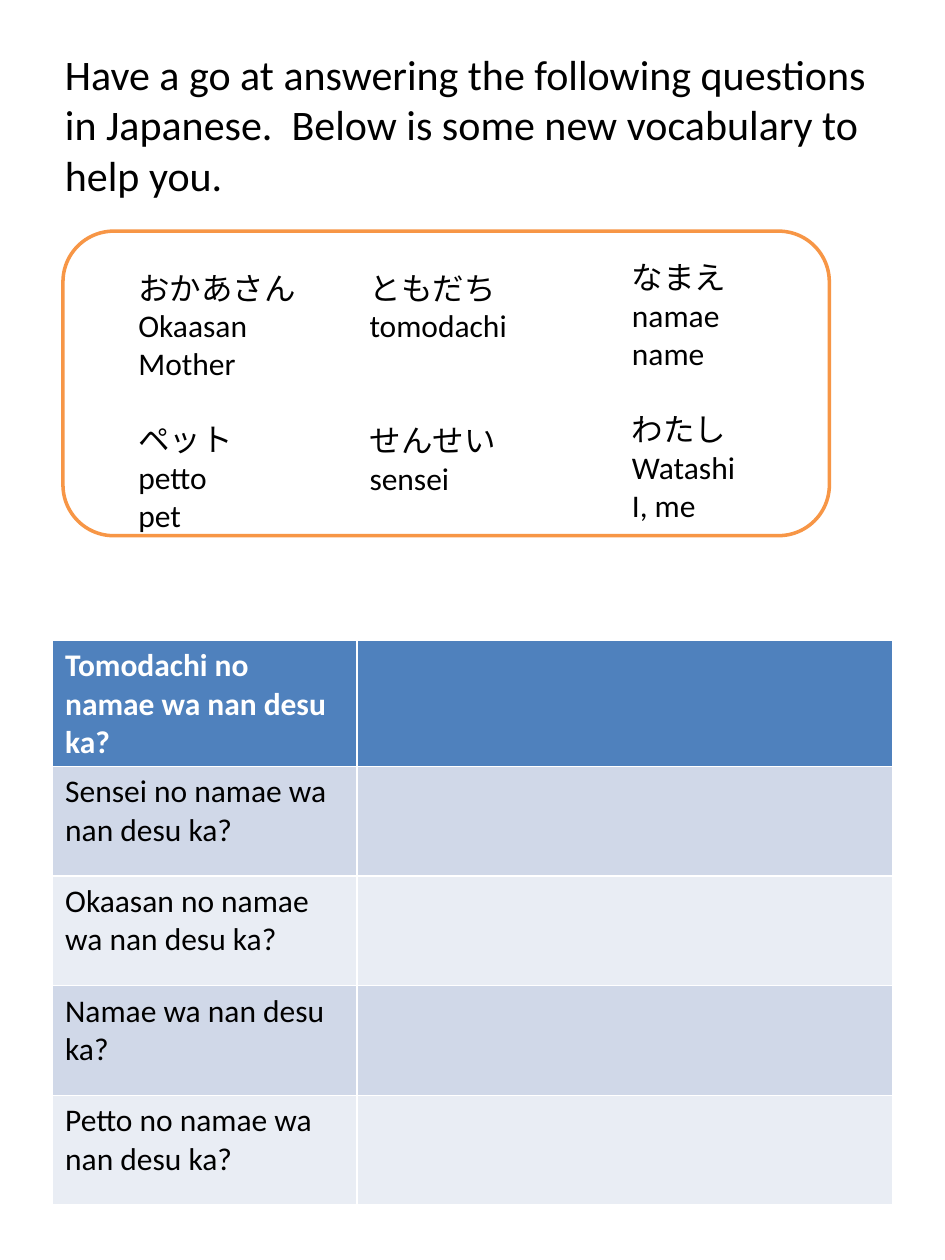
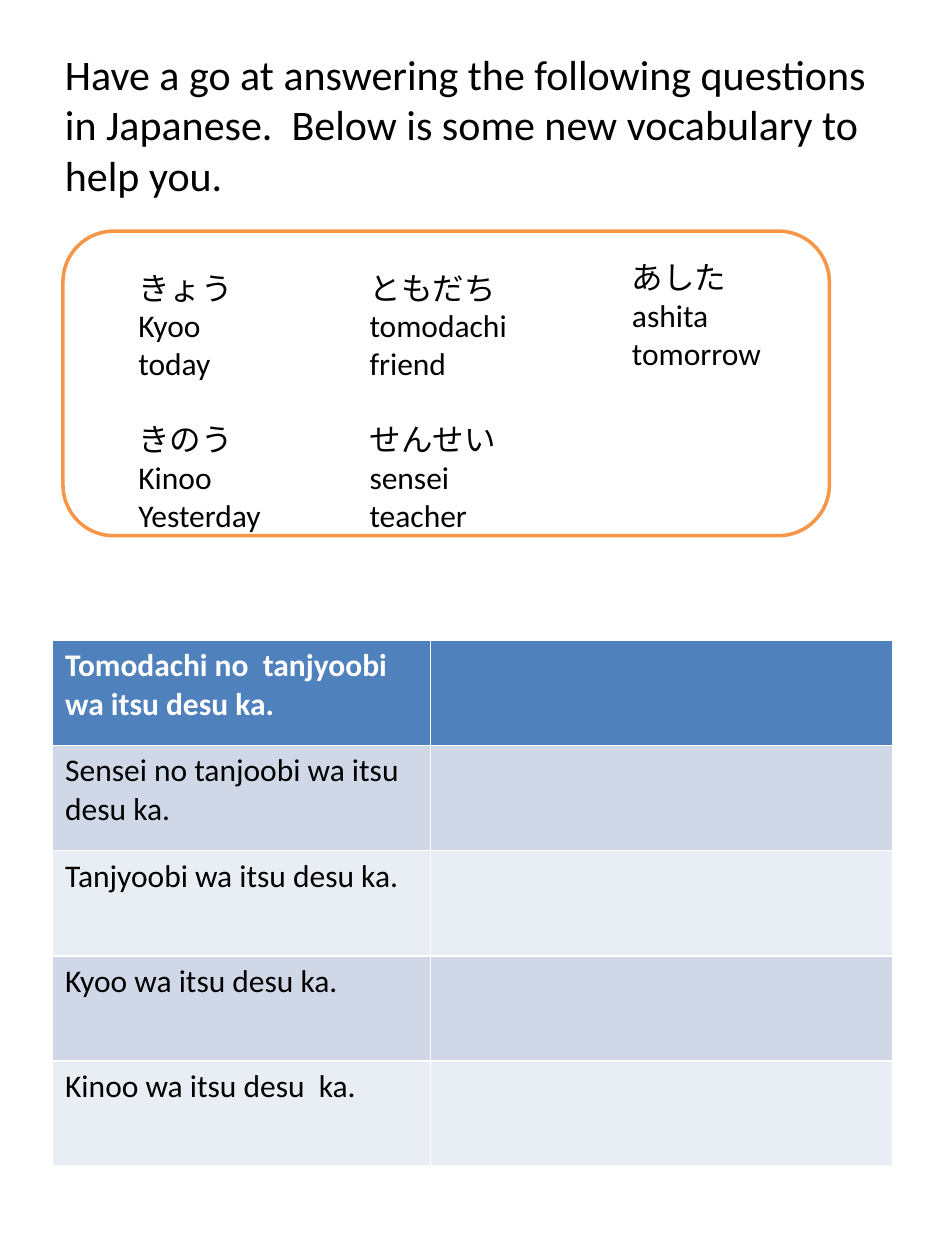
from pptx import Presentation
from pptx import util as u
from pptx.dml.color import RGBColor
from pptx.enum import shapes, text

INTRO = ("Have a go at answering the following questions in Japanese.  "
         "Below is some new vocabulary to help you.")

PAGES = [
    {
        "vocab": [
            [("おかあさん", "Okaasan", "Mother"), ("ペット", "petto", "pet")],
            [("ともだち", "tomodachi"), ("せんせい", "sensei")],
            [("なまえ", "namae", "name"), ("わたし", "Watashi", "I, me")],
        ],
        "asks": [
            "Tomodachi no namae wa nan desu ka?",
            "Sensei no namae wa nan desu ka?",
            "Okaasan no namae wa nan desu ka?",
            "Namae wa nan desu ka?",
            "Petto no namae wa nan desu ka?",
        ],
        "cols": (6.14, 10.8),
        "row": 2.21,
    },
    {
        "vocab": [
            [("きょう", "Kyoo", "today"), ("きのう", "Kinoo", "Yesterday")],
            [("ともだち", "tomodachi", "friend"), ("せんせい", "sensei", "teacher")],
            [("あした", "ashita", "tomorrow")],
        ],
        "asks": [
            "Tomodachi no  tanjyoobi wa itsu desu ka.",
            "Sensei no tanjoobi wa itsu desu ka.",
            "Tanjyoobi wa itsu desu ka.",
            "Kyoo wa itsu desu ka.",
            "Kinoo wa itsu desu  ka.",
        ],
        "cols": (7.62, 9.32),
        "row": 2.12,
    },
]

SPOTS = [(2.54, 5.29, 5.29), (7.2, 5.29, 3.81), (12.49, 5.08, 3.18)]
LEFT = 1.06
LINE = 22
BLACK, WHITE, ORANGE = "000000", "FFFFFF", "F79646"
HEAD, BANDS = "4F81BD", ("E9EDF4", "D0D8E8")


def color(code):
    return RGBColor.from_string(code)


def style(para, size, ink=BLACK, bold=False):
    for run in para.runs:
        run.font.name = "Calibri"
        run.font.size = u.Pt(size)
        run.font.bold = bold
        run.font.color.rgb = color(ink)


def add_box(slide, x, y, w, h):
    frame = slide.shapes.add_textbox(u.Cm(x), u.Cm(y), u.Cm(w), u.Cm(h)).text_frame
    frame.word_wrap = True
    frame.auto_size = text.MSO_AUTO_SIZE.SHAPE_TO_FIT_TEXT
    return frame


def add_intro(slide):
    frame = add_box(slide, LEFT, 0.85, 16.72, 2.31)
    frame.text = INTRO
    style(frame.paragraphs[0], 24)


def add_panel(slide):
    panel = slide.shapes.add_shape(shapes.MSO_SHAPE.ROUNDED_RECTANGLE,
                                   u.Cm(1.27), u.Cm(4.66), u.Cm(15.45), u.Cm(6.14))
    panel.shadow.inherit = False
    panel.fill.solid()
    panel.fill.fore_color.rgb = color(WHITE)
    panel.line.color.rgb = color(ORANGE)
    panel.line.width = u.Pt(2)


def add_words(slide, words, spot):
    frame = add_box(slide, *spot, 5.64)
    frame.text = "\n".join(line for word in words for line in word)
    for para in frame.paragraphs:
        style(para, 18)
    first = len(words[0])
    if len(words) > 1:
        frame.paragraphs[first].space_before = u.Pt(LINE * (4 - first))


def add_asks(slide, asks, cols, row):
    table = slide.shapes.add_table(len(asks), len(cols), u.Cm(LEFT), u.Cm(12.91),
                                   u.Cm(sum(cols)), u.Cm(row * len(asks))).table
    for col, width in zip(table.columns, cols):
        col.width = u.Cm(width)
    for i, ask in enumerate(asks):
        table.rows[i].height = u.Cm(row)
        table.cell(i, 0).text = ask
        for cell in table.rows[i].cells:
            cell.fill.solid()
            cell.fill.fore_color.rgb = color(BANDS[i % 2] if i else HEAD)
            style(cell.text_frame.paragraphs[0], 18, BLACK if i else WHITE, i == 0)


def main():
    deck = Presentation()
    deck.slide_width, deck.slide_height = u.Cm(19.05), u.Cm(25.4)
    for page in PAGES:
        slide = deck.slides.add_slide(deck.slide_layouts[6])
        add_intro(slide)
        add_panel(slide)
        for words, spot in zip(page["vocab"], SPOTS):
            add_words(slide, words, spot)
        add_asks(slide, page["asks"], page["cols"], page["row"])
    deck.save("out.pptx")


if __name__ == "__main__":
    main()
